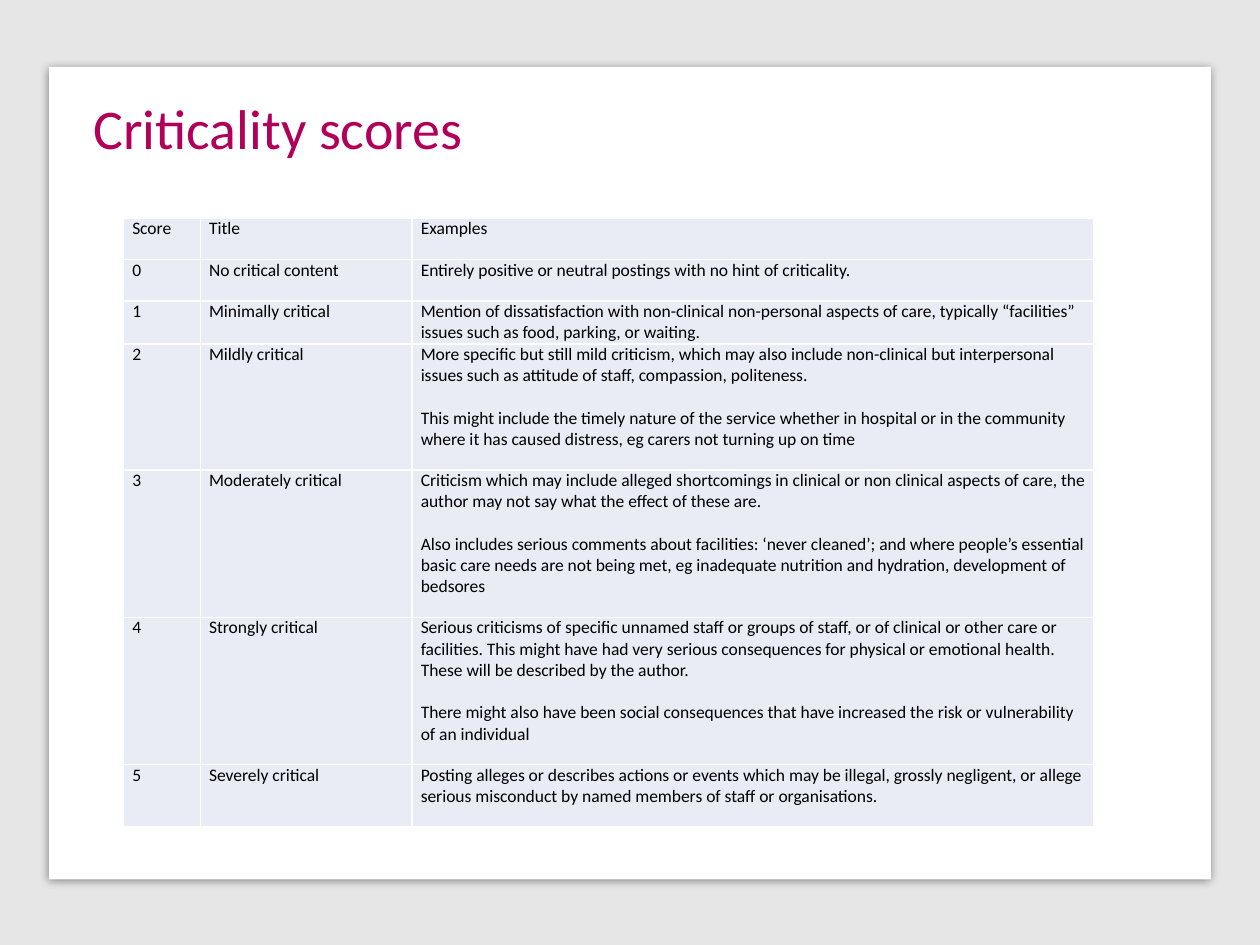
from lxml.etree import SubElement
from pptx import Presentation
from pptx.dml.color import RGBColor
from pptx.enum.shapes import MSO_SHAPE
from pptx.oxml import parse_xml
from pptx.oxml.ns import nsdecls, qn
from pptx.util import Inches, Pt

COLUMN_WIDTHS = (0.61, 1.68, 5.41)
ROW_HEIGHTS = (0.33, 0.33, 0.34, 1, 1.17, 1.17, 0.49)
SCORES = (
    ("Score", "Title", "Examples"),
    ("0", "No critical content",
     "Entirely positive or neutral postings with no hint of criticality."),
    ("1", "Minimally critical",
     "Mention of dissatisfaction with non-clinical non-personal aspects of care, "
     "typically “facilities” issues such as food, parking, or waiting."),
    ("2", "Mildly critical",
     "More specific but still mild criticism, which may also include non-clinical but "
     "interpersonal issues such as attitude of staff, compassion, politeness.\n"
     "This might include the timely nature of the service whether in hospital or in the "
     "community where it has caused distress, eg carers not turning up on time"),
    ("3", "Moderately critical",
     "Criticism which may include alleged shortcomings in clinical or non clinical aspects "
     "of care, the author may not say what the effect of these are.\n"
     "Also includes serious comments about facilities: ‘never cleaned’; and where people’s "
     "essential basic care needs are not being met, eg inadequate nutrition and hydration, "
     "development of bedsores"),
    ("4", "Strongly critical",
     "Serious criticisms of specific unnamed staff or groups of staff, or of clinical or other "
     "care or facilities. This might have had very serious consequences for physical or "
     "emotional health. These will be described by the author.\n"
     "There might also have been social consequences that have increased the risk or "
     "vulnerability of an individual"),
    ("5", "Severely critical",
     "Posting alleges or describes actions or events which may be illegal, grossly negligent, "
     "or allege serious misconduct by named members of staff or organisations."),
)


def colour(value):
    return RGBColor.from_string(value)


def apply(target, values):
    for name, value in values.items():
        setattr(target, name, value)


class SlideBuilder:
    """Holds the style and the current slide, and adds each kind of element."""

    font = "Calibri"
    black, white, accent, canvas, cell_fill = "000000", "FFFFFF", "B10059", "E7E6E6", "E9EBF5"
    cell_format = {"margin_left": Inches(0.07), "margin_right": Inches(0.07),
                   "margin_top": 0, "margin_bottom": 0}

    def __init__(self, page):
        self.page = page

    def set_text(self, frame, text, size, shade):
        frame.text = text
        for number, para in enumerate(frame.paragraphs):
            if number:
                para.space_before = Pt(12.2)
            for span in para.runs:
                apply(span.font, {"name": self.font, "size": Pt(size)})
                span.font.color.rgb = colour(shade)

    def panel(self, left, top, width, height, fill, shadow=False):
        box = self.page.shapes.add_shape(
            MSO_SHAPE.RECTANGLE, Inches(left), Inches(top), Inches(width), Inches(height))
        box.shadow.inherit = False
        box.fill.solid()
        box.fill.fore_color.rgb = colour(fill)
        box.line.fill.background()
        if shadow:
            effects = box._element.spPr.find(qn("a:effectLst"))
            effects.append(parse_xml(
                f'<a:outerShdw {nsdecls("a")} blurRad="{Pt(5)}" dist="{Pt(1.4)}" dir="5400000" '
                f'algn="t" rotWithShape="0"><a:srgbClr val="{self.black}">'
                '<a:alpha val="43000"/></a:srgbClr></a:outerShdw>'))

    def title(self, left, top, width, height, text):
        box = self.page.shapes.add_textbox(
            Inches(left), Inches(top), Inches(width), Inches(height))
        apply(box.text_frame, {"margin_left": Inches(0.2), "word_wrap": True})
        self.set_text(box.text_frame, text, 32, self.accent)

    def border(self, cell):
        properties = cell._tc.get_or_add_tcPr()
        for position, side in enumerate(("lnL", "lnR", "lnT", "lnB")):
            line = parse_xml(
                f'<a:{side} {nsdecls("a")} w="{Pt(1)}"><a:solidFill>'
                f'<a:srgbClr val="{self.white}"/></a:solidFill></a:{side}>')
            SubElement(line, qn("a:prstDash"), val="solid")
            properties.insert(position, line)

    def table(self, left, top, widths, heights, rows):
        grid = self.page.shapes.add_table(
            len(heights), len(widths), Inches(left), Inches(top),
            Inches(sum(widths)), Inches(sum(heights))).table
        apply(grid, {"first_row": False, "horz_banding": False})
        for column, width in zip(grid.columns, widths):
            column.width = Inches(width)
        for row, height, texts in zip(grid.rows, heights, rows):
            row.height = Inches(height)
            for cell, text in zip(row.cells, texts):
                apply(cell, self.cell_format)
                cell.fill.solid()
                cell.fill.fore_color.rgb = colour(self.cell_fill)
                self.border(cell)
                self.set_text(cell.text_frame, text, 10, self.black)


def main():
    deck = Presentation()
    apply(deck, {"slide_width": Inches(10), "slide_height": Inches(7.5)})
    builder = SlideBuilder(deck.slides.add_slide(deck.slide_layouts[6]))
    builder.panel(0, 0, 10, 7.5, builder.canvas)
    builder.panel(0.39, 0.53, 9.22, 6.45, builder.white, shadow=True)
    builder.title(0.54, 0.69, 3.68, 0.64, "Criticality scores")
    builder.table(0.98, 1.73, COLUMN_WIDTHS, ROW_HEIGHTS, SCORES)
    deck.save("out.pptx")


if __name__ == "__main__":
    main()
